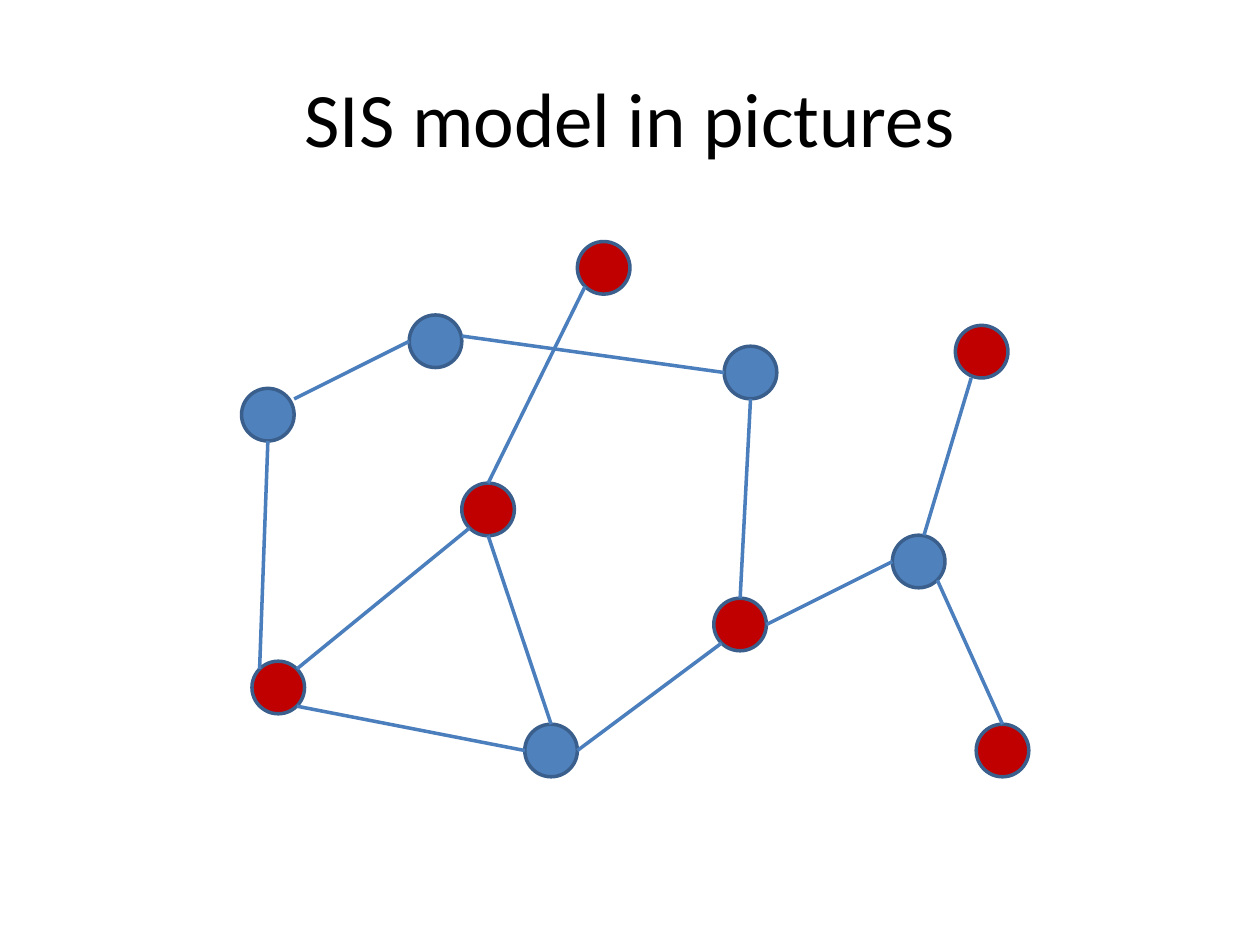
"""Build a slide with a contact network of healthy and infected nodes."""
from lxml.etree import SubElement
from pptx import Presentation
from pptx.dml.color import RGBColor
from pptx.enum.shapes import MSO_CONNECTOR, MSO_SHAPE
from pptx.enum.text import MSO_ANCHOR, PP_ALIGN
from pptx.oxml.ns import qn
from pptx.util import Cm, Pt

COLORS = {"well": "4F81BD", "sick": "C00000", "rim": "3A5F8C",
          "edge": "4B7EBC", "text": "000000"}
RADIUS = 0.53
DIAG = 0.71
SIDES = {"n": (0, -1), "s": (0, 1), "w": (-1, 0), "e": (1, 0),
         "nw": (-DIAG, -DIAG), "ne": (DIAG, -DIAG),
         "sw": (-DIAG, DIAG), "se": (DIAG, DIAG),
         "ene": (1, -0.6), "e-n": (1, -0.2), "n-e": (0.2, -1), "s-w": (-0.4, 1)}
NODES = {
    "A": (5.4, 8.36, "well"), "B": (8.78, 6.88, "well"),
    "C": (11.11, 15.13, "well"), "D": (18.52, 11.32, "well"),
    "E": (15.13, 7.51, "well"), "F": (5.61, 13.86, "sick"),
    "G": (9.84, 10.27, "sick"), "H": (14.92, 12.59, "sick"),
    "I": (19.79, 7.09, "sick"), "J": (20.21, 15.13, "sick"),
    "K": (12.17, 5.4, "sick"),
}
EDGES = [
    ("A", "ene", "B", "w"), ("A", "s", "F", "nw"), ("F", "ne", "G", "sw"),
    ("F", "se", "C", "w"), ("G", "s", "C", "n"), ("H", "sw", "C", "e"),
    ("B", "e-n", "E", "w"), ("G", "n", "K", "sw"), ("E", "s", "H", "n"),
    ("H", "e", "D", "w"), ("D", "n-e", "I", "s-w"), ("D", "se", "J", "n"),
]


def color(name):
    """Return the named colour."""
    return RGBColor.from_string(COLORS[name])


def add_title(slide, text):
    """Add the centred heading."""
    box = slide.shapes.add_textbox(Cm(1.27), Cm(0.76), Cm(22.86), Cm(3.18))
    frame = box.text_frame
    frame.word_wrap = True
    frame.vertical_anchor = MSO_ANCHOR.MIDDLE
    para = frame.paragraphs[0]
    para.alignment = PP_ALIGN.CENTER
    run = para.add_run()
    run.text = text
    run.font.name = "Calibri"
    run.font.size = Pt(44)
    run.font.color.rgb = color("text")


def add_node(slide, x, y, state):
    """Add a circle centred on a point and filled by its state."""
    node = slide.shapes.add_shape(MSO_SHAPE.OVAL, Cm(x - RADIUS), Cm(y - RADIUS),
                                  Cm(2 * RADIUS), Cm(2 * RADIUS))
    node.shadow.inherit = False
    node.fill.solid()
    node.fill.fore_color.rgb = color(state)
    node.line.color.rgb = color("rim")
    node.line.width = Pt(2)


def find_end(name, side):
    """Return the point at one side of a node."""
    x, y, _ = NODES[name]
    dx, dy = SIDES[side]
    return Cm(x + dx * RADIUS), Cm(y + dy * RADIUS)


def add_edge(slide, start, side, stop, other):
    """Add a straight line between the sides of two nodes."""
    edge = slide.shapes.add_connector(MSO_CONNECTOR.STRAIGHT,
                                      *find_end(start, side), *find_end(stop, other))
    edge.line.color.rgb = color("edge")
    edge.line.width = Pt(2)
    SubElement(edge._element.spPr, qn("a:effectLst"))


def main():
    """Build and save the slide."""
    deck = Presentation()
    deck.slide_width, deck.slide_height = Cm(25.4), Cm(19.05)
    slide = deck.slides.add_slide(deck.slide_layouts[6])
    add_title(slide, "SIS model in pictures")
    for node in NODES.values():
        add_node(slide, *node)
    for edge in EDGES:
        add_edge(slide, *edge)
    deck.save("out.pptx")


if __name__ == "__main__":
    main()
